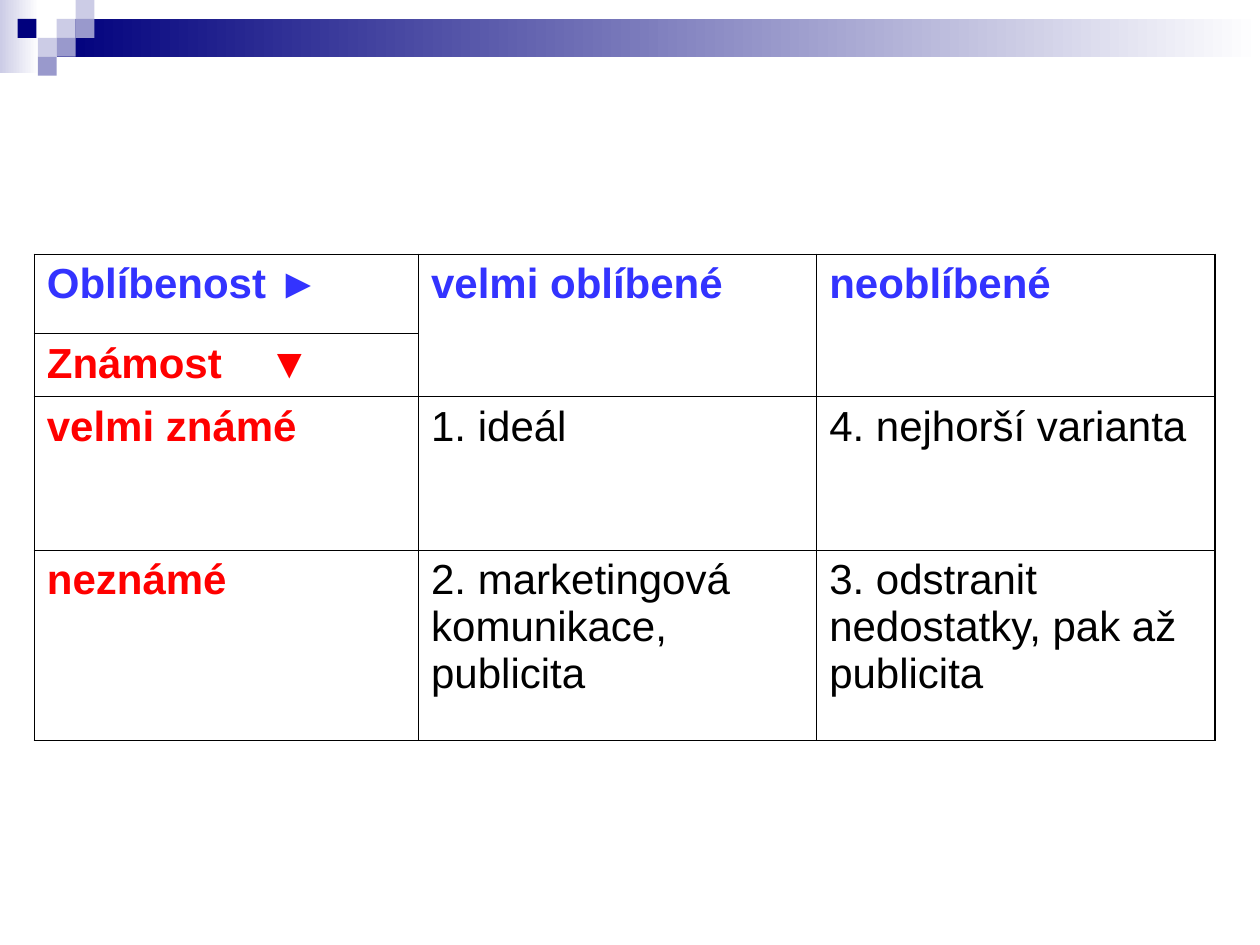
from lxml.etree import SubElement
from pptx import Presentation
from pptx.dml.color import RGBColor
from pptx.enum.shapes import MSO_SHAPE as Shape
from pptx.oxml.ns import qn
from pptx.util import Pt

NAVY, VIOLET, LILAC, WHITE = "00007D", "9999CC", "CCCCE6", "FFFFFF"
BLUE, RED, BLACK = "3333FF", "FF0000", "000000"

SQUARES = {  # colour: (column, row) on the ornament grid
    LILAC: [(3, 1), (4, 0), (2, 2)],
    VIOLET: [(4, 1), (3, 2), (2, 3)],
    NAVY: [(0.93, 1)],
}
COLUMN_WIDTHS = [219.6, 227.5, 227.5]
ROW_HEIGHTS = [45.4, 36, 87.8, 108.7]
ARROW_TAB = 126.7
MATRIX = [
    [("Oblíbenost ►", BLUE), ("velmi oblíbené", BLUE), ("neoblíbené", BLUE)],
    [("Známost\t▼", RED), None, None],
    [("velmi známé", RED), ("1. ideál", BLACK), ("4. nejhorší varianta", BLACK)],
    [("neznámé", RED), ("2. marketingová komunikace, publicita", BLACK),
     ("3. odstranit nedostatky, pak až publicita", BLACK)],
]


def color(value):
    return RGBColor.from_string(value)


def add_block(slide, left, top, width, height, start, end=None):
    """Add a borderless rectangle, fading to the right if an end colour is given."""
    block = slide.shapes.add_shape(Shape.RECTANGLE, Pt(left), Pt(top), Pt(width), Pt(height))
    block.shadow.inherit = False
    block.line.fill.background()
    if end:
        block.fill.gradient()
        block.fill.gradient_angle = 0
        for stop, value in zip(block.fill.gradient_stops, (start, end)):
            stop.color.rgb = color(value)
    else:
        block.fill.solid()
        block.fill.fore_color.rgb = color(start)


def add_ornament(slide, left, top, width, unit):
    """Draw the header band and its squares on a grid of the given unit."""
    add_block(slide, left, top, 22.3, 41.8, LILAC, WHITE)
    add_block(slide, left + 3 * unit, top + unit, width - 3 * unit, 2 * unit, NAVY, WHITE)
    for value, places in SQUARES.items():
        for column, row in places:
            add_block(slide, left + column * unit, top + row * unit, unit, unit, value)


def add_borders(cell):
    properties = cell._tc.get_or_add_tcPr()
    for side in ("a:lnL", "a:lnR", "a:lnT", "a:lnB"):
        border = SubElement(properties, qn(side), w=str(Pt(1)))
        SubElement(SubElement(border, qn("a:solidFill")), qn("a:srgbClr"), val=BLACK)


def write_cell(cell, text, value):
    paragraph = cell.text_frame.paragraphs[0]
    if "\t" in text:
        tabs = SubElement(paragraph._p.get_or_add_pPr(), qn("a:tabLst"))
        SubElement(tabs, qn("a:tab"), pos=str(Pt(ARROW_TAB)), algn="l")
    run = paragraph.add_run()
    run.text = text
    formats = {"name": "Arial", "size": Pt(24), "bold": value != BLACK}
    for attribute, setting in formats.items():
        setattr(run.font, attribute, setting)
    run.font.color.rgb = color(value)


def add_matrix(slide, left, top):
    """Add the table of popularity against awareness."""
    table = slide.shapes.add_table(
        len(ROW_HEIGHTS), len(COLUMN_WIDTHS), Pt(left), Pt(top),
        Pt(sum(COLUMN_WIDTHS)), Pt(sum(ROW_HEIGHTS))).table
    table.first_row = table.horz_banding = False
    for column, width in zip(table.columns, COLUMN_WIDTHS):
        column.width = Pt(width)
    for row, height in zip(table.rows, ROW_HEIGHTS):
        row.height = Pt(height)
    for column in (1, 2):
        table.cell(0, column).merge(table.cell(1, column))
    for row, entries in zip(table.rows, MATRIX):
        for cell, entry in zip(row.cells, entries):
            add_borders(cell)
            cell.fill.background()
            if entry:
                write_cell(cell, *entry)


def main():
    presentation = Presentation()
    presentation.slide_width, presentation.slide_height = Pt(720), Pt(540)
    slide = presentation.slides.add_slide(presentation.slide_layouts[6])
    add_ornament(slide, 0, 0, 720, 10.8)
    add_matrix(slide, 19.6, 145.3)
    presentation.save("out.pptx")


if __name__ == "__main__":
    main()
